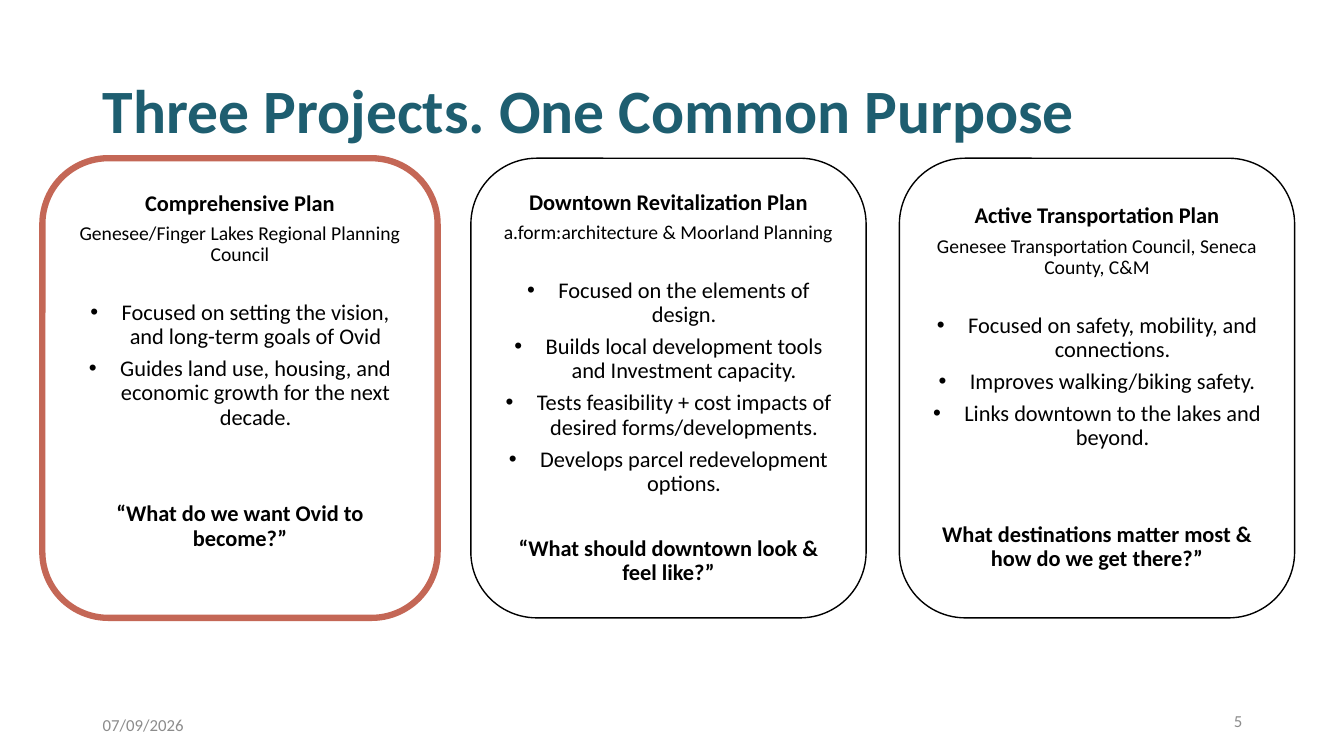
"""Build a slide that compares three planning projects in rounded cards."""
from dataclasses import dataclass

from lxml import etree
from pptx import Presentation
from pptx.dml.color import RGBColor
from pptx.enum import shapes, text
from pptx.oxml import ns
from pptx.util import Inches, Pt

TITLE = "Three Projects. One Common Purpose"
CARDS = [
    {
        "name": "Comprehensive Plan",
        "team": "Genesee/Finger Lakes Regional Planning Council",
        "points": [
            "Focused on setting the vision, and long-term goals of Ovid",
            "Guides land use, housing, and economic growth for the next decade.",
        ],
        "ask": "“What do we want Ovid to become?”",
        "gap": 52, "foot": 0.38, "focus": True,
    },
    {
        "name": "Downtown Revitalization Plan",
        "team": "a.form:architecture & Moorland Planning",
        "points": [
            "Focused on the elements of design.",
            "Builds local development tools and Investment capacity.",
            "Tests feasibility + cost impacts of desired forms/developments.",
            "Develops parcel redevelopment options.",
        ],
        "ask": "“What should downtown look & feel like?”",
        "gap": 29, "foot": 0.05, "focus": False,
    },
    {
        "name": "Active Transportation Plan",
        "team": "Genesee Transportation Council, Seneca County, C&M",
        "points": [
            "Focused on safety, mobility, and connections.",
            "Improves walking/biking safety.",
            "Links downtown to the lakes and beyond.",
        ],
        "ask": "What destinations matter most & how do we get there?”",
        "gap": 52, "foot": 0.05, "focus": False,
    },
]
ALIGN = text.PP_ALIGN
FOOTER = [
    ("07/09/2026", 0.92, 6.99, ALIGN.LEFT),
    ("5", 9.42, 6.95, ALIGN.RIGHT),
]


@dataclass(frozen=True)
class Theme:
    """Hold the colours, font and type sizes."""
    font: str = "Calibri"
    title: str = "1E5E70"
    ink: str = "000000"
    muted: str = "8C8C8C"
    paper: str = "FFFFFF"
    focus: str = "C46756"
    head: int = 44
    body: int = 16
    small: int = 14
    foot: int = 12


THEME = Theme()
LEFT, TOP, WIDE, HIGH, STEP = 0.42, 1.57, 3.92, 4.56, 4.25
LINE, AFTER, TEAM_GAP = 0.9, 0.35, 25


def color(code):
    """Turn a hex code into a colour."""
    return RGBColor.from_string(code)


def style(para, size, tint, bold=False, align=ALIGN.LEFT):
    """Format a paragraph and its runs."""
    para.alignment = align
    for run in para.runs:
        run.font.name = THEME.font
        run.font.size = Pt(size)
        run.font.bold = bold
        run.font.color.rgb = color(tint)


def bullet(para):
    """Give a paragraph a hanging bullet."""
    props = para._p.get_or_add_pPr()
    props.set("marL", str(Inches(0.31)))
    props.set("indent", str(Inches(-0.31)))
    etree.SubElement(props, ns.qn("a:buFont"), typeface="Arial")
    etree.SubElement(props, ns.qn("a:buChar"), char="•")


def add_title(slide):
    """Place the slide title."""
    title = slide.shapes.title
    title.left, title.top = Inches(0.92), Inches(0.4)
    title.width, title.height = Inches(11.5), Inches(1.45)
    frame = title.text_frame
    frame.text = TITLE
    frame.vertical_anchor = text.MSO_ANCHOR.MIDDLE
    frame.paragraphs[0].line_spacing = LINE
    style(frame.paragraphs[0], THEME.head, THEME.title, True)


def add_card(slide, index, card):
    """Draw one project card with its text."""
    box = slide.shapes.add_shape(
        shapes.MSO_SHAPE.ROUNDED_RECTANGLE, Inches(LEFT + index * STEP),
        Inches(TOP), Inches(WIDE), Inches(HIGH))
    box.shadow.inherit = False
    box.fill.solid()
    box.fill.fore_color.rgb = color(THEME.paper)
    box.line.color.rgb = color(THEME.focus if card["focus"] else THEME.ink)
    box.line.width = Pt(4.5 if card["focus"] else 1)

    frame = box.text_frame
    frame.word_wrap = True
    frame.vertical_anchor = text.MSO_ANCHOR.MIDDLE
    frame.margin_bottom = Inches(card["foot"])
    frame.text = "\n".join(
        [card["name"], card["team"], *card["points"], card["ask"]])
    paras = frame.paragraphs
    name, team, *items, ask = paras
    for item in items:
        bullet(item)
    for para in paras:
        size = THEME.small if para is team else THEME.body
        style(para, size, THEME.ink, para in (name, ask), ALIGN.CENTER)
        para.line_spacing = LINE
        para.space_after = Pt(size * AFTER)
    team.space_after = Pt(TEAM_GAP)
    items[-1].space_after = Pt(card["gap"])
    ask.space_after = Pt(0)


def add_foot(slide, words, left, top, align):
    """Place one footer label."""
    box = slide.shapes.add_textbox(
        Inches(left), Inches(top), Inches(3), Inches(0.4))
    frame = box.text_frame
    frame.word_wrap = True
    frame.vertical_anchor = text.MSO_ANCHOR.MIDDLE
    frame.text = words
    style(frame.paragraphs[0], THEME.foot, THEME.muted, align=align)


def main():
    """Build and save the deck."""
    deck = Presentation()
    deck.slide_width, deck.slide_height = Inches(13.33), Inches(7.5)
    slide = deck.slides.add_slide(deck.slide_layouts.get_by_name("Title Only"))
    add_title(slide)
    for label in FOOTER:
        add_foot(slide, *label)
    for index, card in enumerate(CARDS):
        add_card(slide, index, card)
    deck.save("out.pptx")


if __name__ == "__main__":
    main()
